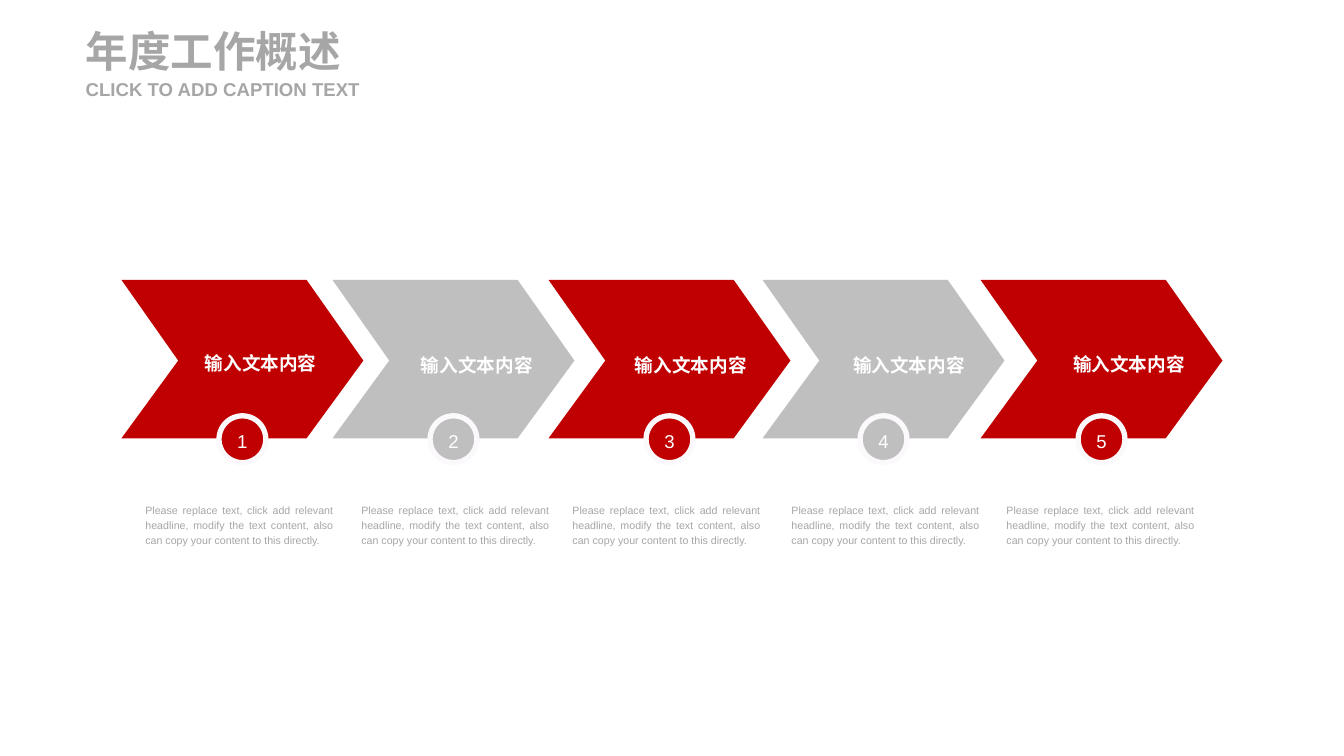
from pptx import Presentation
from pptx.dml.color import RGBColor
from pptx.enum.shapes import MSO_SHAPE
from pptx.enum.text import MSO_ANCHOR, MSO_AUTO_SIZE, PP_ALIGN
from pptx.util import Pt

# Content
TITLE = "年度工作概述"
CAPTION = "CLICK TO ADD CAPTION TEXT"
LABEL = "输入文本内容"
NOTE = ("Please replace text, click add relevant headline, modify the text "
        "content, also can copy your content to this directly.")
# Each step: arrow left, label centre x, label centre y, note left
STEPS = [
    (122, 262, 362, 146),
    (334, 479, 364, 363),
    (551, 694, 364, 575),
    (766, 913, 364, 795),
    (985, 1134, 363, 1011),
]

# Colours and sizes in px
RED = RGBColor(0xC0, 0x00, 0x00)
SILVER = RGBColor(0xBF, 0xBF, 0xBF)
GREY = RGBColor(0xA6, 0xA6, 0xA6)
WHITE = RGBColor(0xFF, 0xFF, 0xFF)
RIM = RGBColor(0xFB, 0xF9, 0xFC)
PX = 9525
TOP, WIDE, HIGH = 281, 243, 159
NOTCH, NECK, MID = 57, 186, 81
DISC, DISC_Y = 47, 441
LABEL_W, LABEL_H = 160, 24
NOTE_TOP, NOTE_W, NOTE_H = 503, 189, 45

# Text formats
HEAD = dict(size=Pt(32), bold=True, color=GREY, align=PP_ALIGN.LEFT)
SUB = dict(HEAD, size=Pt(14))
TAG = dict(size=Pt(14), bold=True, color=WHITE, align=PP_ALIGN.CENTER, gap=1.2)
DIGIT = dict(TAG, bold=False)
BODY = dict(size=Pt(8), bold=False, color=GREY, align=PP_ALIGN.JUSTIFY,
            gap=1.2, anchor=MSO_ANCHOR.TOP)


def place(shape, *box):
    for name, value in zip(("left", "top", "width", "height"), box):
        setattr(shape, name, round(value * PX))


def write(shape, text, look):
    frame = shape.text_frame
    frame_look = dict(
        margin_left=0, margin_top=0, margin_right=0, margin_bottom=0,
        word_wrap=True, auto_size=MSO_AUTO_SIZE.NONE,
        vertical_anchor=look.get("anchor", MSO_ANCHOR.MIDDLE))
    for name, value in frame_look.items():
        setattr(frame, name, value)
    para = frame.paragraphs[0]
    para_look = dict(alignment=look["align"], space_before=Pt(0),
                     line_spacing=look.get("gap", 1.0))
    for name, value in para_look.items():
        setattr(para, name, value)
    run = para.add_run()
    run.text = text
    for name, value in dict(name="Arial", size=look["size"], bold=look["bold"]).items():
        setattr(run.font, name, value)
    run.font.color.rgb = look["color"]


def add_text(shapes, text, look, *box):
    area = shapes.add_textbox(0, 0, 0, 0)
    place(area, *box)
    write(area, text, look)


def paint(shape, color):
    shape.shadow.inherit = False
    shape.fill.solid()
    shape.fill.fore_color.rgb = color


def add_arrow(shapes, left, color):
    points = [(NOTCH, MID), (0, HIGH), (NECK, HIGH), (WIDE, MID), (NECK, 0)]
    pen = shapes.build_freeform(left, TOP, scale=PX)
    pen.add_line_segments([(left + x, TOP + y) for x, y in points], close=True)
    arrow = pen.convert_to_shape()
    paint(arrow, color)
    arrow.line.fill.background()


def add_disc(shapes, mid, number, color):
    disc = shapes.add_shape(MSO_SHAPE.OVAL, 0, 0, 0, 0)
    place(disc, mid - DISC / 2, DISC_Y - DISC / 2, DISC, DISC)
    paint(disc, color)
    disc.line.color.rgb = RIM
    disc.line.width = Pt(4)
    write(disc, str(number), DIGIT)


def main():
    deck = Presentation()
    deck.slide_width, deck.slide_height = 1350 * PX, 759 * PX
    slide = deck.slides.add_slide(deck.slide_layouts[0])
    shapes = slide.shapes

    # Title and caption
    place(shapes.title, 86, 25, 295, 52)
    write(shapes.title, TITLE, HEAD)
    caption = slide.placeholders[1]
    place(caption, 86, 78, 295, 23)
    write(caption, CAPTION, SUB)

    # Arrow, label, numbered disc and note of each step
    for number, (left, mid, label_y, note_x) in enumerate(STEPS, 1):
        color = RED if number % 2 else SILVER
        add_arrow(shapes, left, color)
        add_text(shapes, LABEL, TAG, mid - LABEL_W / 2, label_y - LABEL_H / 2,
                 LABEL_W, LABEL_H)
        add_disc(shapes, left + WIDE / 2, number, color)
        add_text(shapes, NOTE, BODY, note_x, NOTE_TOP, NOTE_W, NOTE_H)

    deck.save("out.pptx")


if __name__ == "__main__":
    main()
